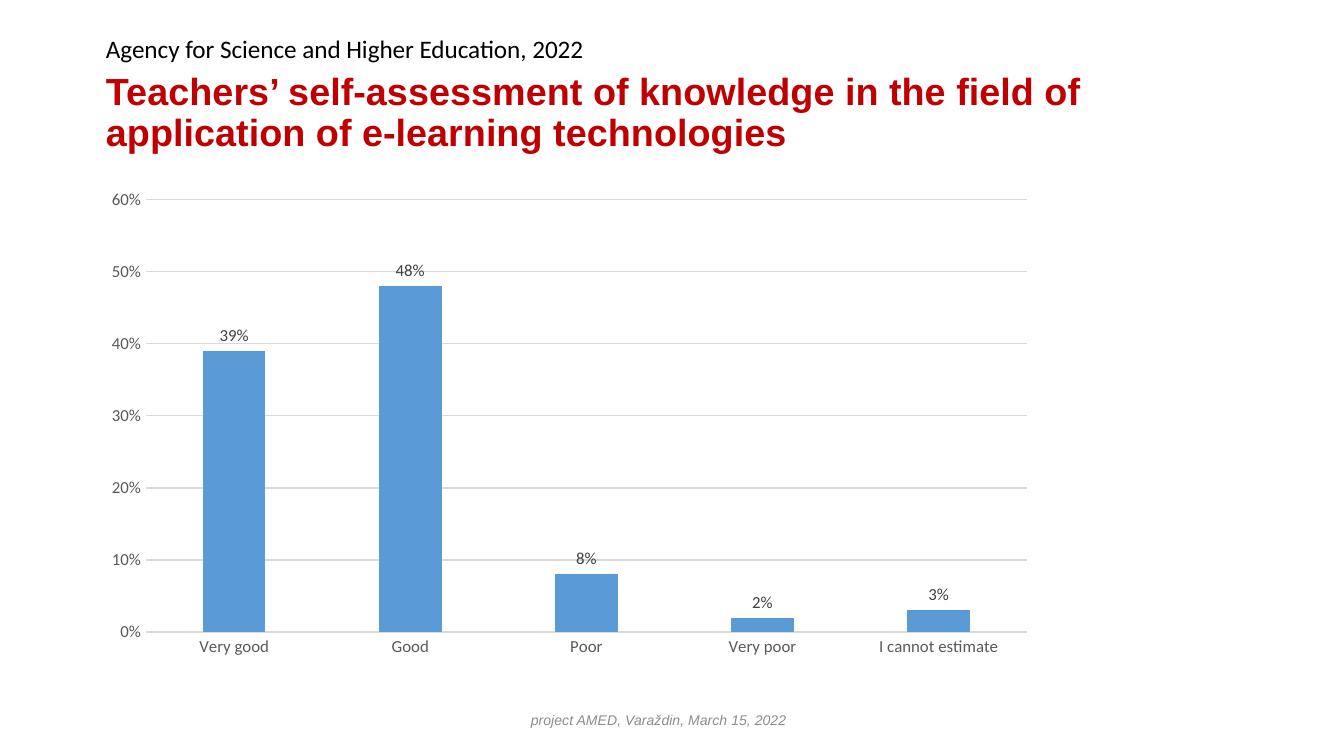
from dataclasses import dataclass

import pptx
import pptx.chart.data
import pptx.dml.color
import pptx.enum.chart
import pptx.enum.text
import pptx.util
from pptx.util import Inches

COLORS = {
    "title": "C00000",
    "source": "000000",
    "footer": "8C8C8C",
    "bar": "5B9BD5",
    "axis text": "595959",
    "label": "404040",
    "grid": "D9D9D9",
}
LEFT = 0.69


@dataclass
class Box:
    left: float
    top: float
    width: float
    height: float

    def lengths(self) -> tuple:
        return tuple(Inches(n) for n in (self.left, self.top, self.width, self.height))


@dataclass
class Rating:
    answer: str
    share: float


RATINGS = [
    Rating("Very good", 0.39),
    Rating("Good", 0.48),
    Rating("Poor", 0.08),
    Rating("Very poor", 0.02),
    Rating("I cannot estimate", 0.03),
]


def rgb(name: str) -> pptx.dml.color.RGBColor:
    return pptx.dml.color.RGBColor.from_string(COLORS[name])


def style_font(font, size: float, color: str, name: str = "Calibri",
               bold: bool = False, italic: bool = False) -> None:
    font.size = pptx.util.Pt(size)
    font.name = name
    font.bold = bold
    font.italic = italic
    font.color.rgb = rgb(color)


def add_text(slide, text: str, box: Box, *, anchor: str = "MIDDLE",
             align: str = "LEFT", spacing: float = 1.0, **font_format) -> None:
    frame = slide.shapes.add_textbox(*box.lengths()).text_frame
    frame.word_wrap = True
    frame.vertical_anchor = pptx.enum.text.MSO_ANCHOR[anchor]
    paragraph = frame.paragraphs[0]
    paragraph.alignment = pptx.enum.text.PP_ALIGN[align]
    paragraph.line_spacing = spacing
    run = paragraph.add_run()
    run.text = text
    style_font(run.font, **font_format)


def style_axis(axis) -> None:
    axis.major_tick_mark = pptx.enum.chart.XL_TICK_MARK.NONE
    axis.minor_tick_mark = pptx.enum.chart.XL_TICK_MARK.NONE
    style_font(axis.tick_labels.font, 9, "axis text")


def style_line(line) -> None:
    line.color.rgb = rgb("grid")
    line.width = pptx.util.Pt(0.75)


def add_ratings_chart(slide, ratings: list[Rating], box: Box) -> None:
    data = pptx.chart.data.CategoryChartData(number_format="0%")
    data.categories = [rating.answer for rating in ratings]
    data.add_series("Series 1", [rating.share for rating in ratings])
    chart = slide.shapes.add_chart(
        pptx.enum.chart.XL_CHART_TYPE.COLUMN_CLUSTERED, *box.lengths(), data
    ).chart
    chart.has_title = False
    chart.has_legend = False
    style_font(chart.font, 10, "source")

    style_axis(chart.category_axis)
    style_line(chart.category_axis.format.line)

    shares = chart.value_axis
    style_axis(shares)
    shares.minimum_scale = 0
    shares.maximum_scale = 0.6
    shares.major_unit = 0.1
    shares.format.line.fill.background()
    style_line(shares.major_gridlines.format.line)
    shares.tick_labels.number_format = "0%"
    shares.tick_labels.number_format_is_linked = False

    plot = chart.plots[0]
    plot.gap_width = 182
    plot.vary_by_categories = False
    bars = plot.series[0]
    bars.format.fill.solid()
    bars.format.fill.fore_color.rgb = rgb("bar")
    labels = bars.data_labels
    labels.show_value = True
    labels.position = pptx.enum.chart.XL_LABEL_POSITION.OUTSIDE_END
    labels.number_format = "0%"
    labels.number_format_is_linked = False
    style_font(labels.font, 9, "label")


def main() -> None:
    presentation = pptx.Presentation()
    presentation.slide_width = Inches(10)
    presentation.slide_height = Inches(10 * 9 / 16)
    slide = presentation.slides.add_slide(presentation.slide_layouts[6])

    add_text(slide, "Teachers’ self-assessment of knowledge in the field of "
             "application of e-learning technologies",
             Box(LEFT, 0.3, 8.62, 1.09), spacing=0.9,
             size=20.25, color="title", name="Arial", bold=True)
    add_text(slide, "project AMED, Varaždin, March 15, 2022",
             Box(1.74, 5.21, 6.32, 0.3), align="CENTER",
             size=7.5, color="footer", name="Arial", italic=True)
    add_ratings_chart(slide, RATINGS, Box(LEFT, 1.34, 7.09, 3.62))
    add_text(slide, "Agency for Science and Higher Education, 2022",
             Box(LEFT, 0.2, 4.84, 0.33), anchor="TOP",
             size=13.5, color="source")

    presentation.save("out.pptx")


if __name__ == "__main__":
    main()
